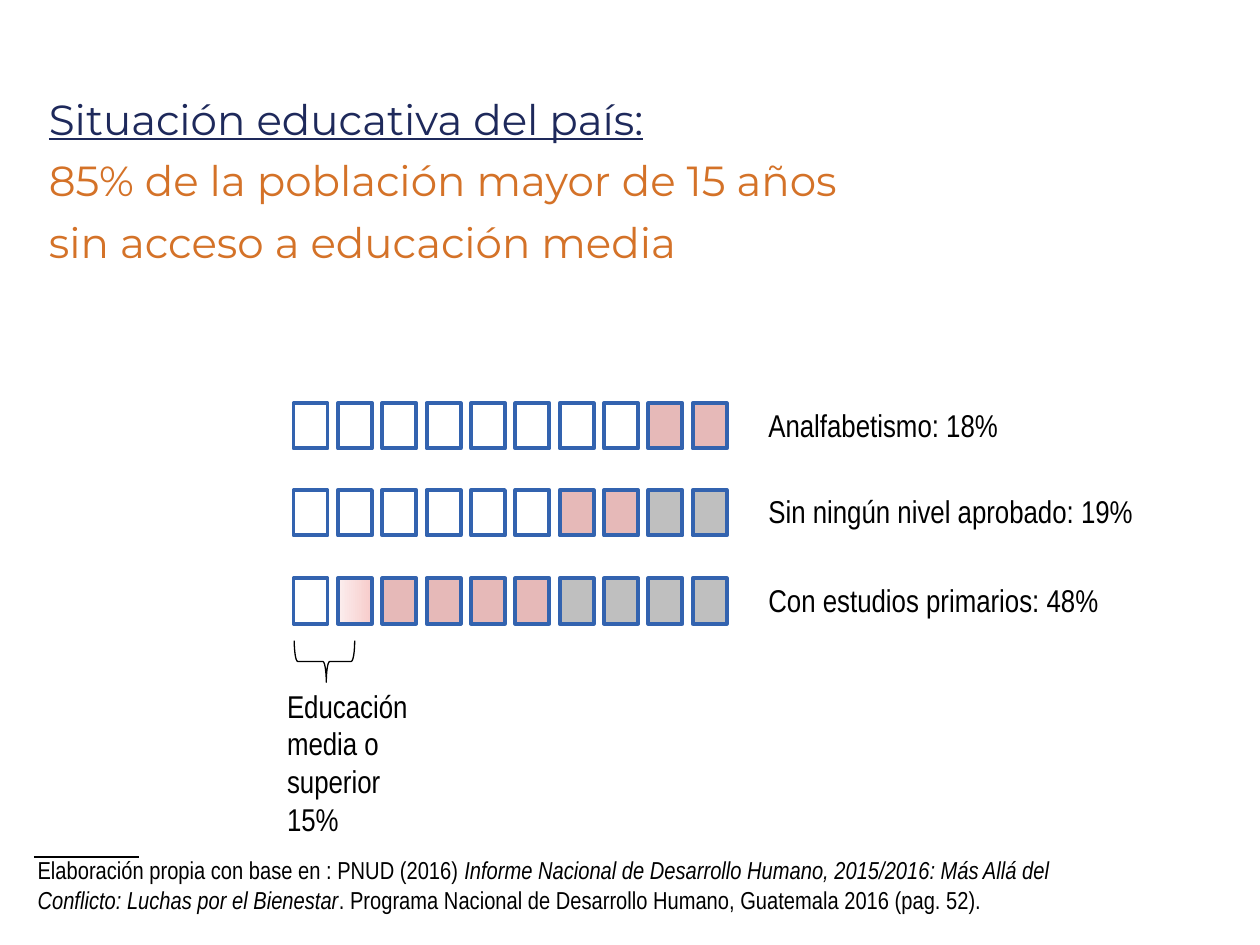
from pptx import Presentation
from pptx.dml.color import RGBColor
from pptx.enum.shapes import MSO_CONNECTOR, MSO_SHAPE
from pptx.enum.text import MSO_AUTO_SIZE
from pptx.oxml.ns import qn
from pptx.util import Inches, Pt
from lxml import etree

BLACK, WHITE, PINK, GRAY = "000000", "FFFFFF", "E6B9B8", "BFBFBF"
BLUE, NAVY, ORANGE = "3363AF", "1E295B", "D47228"
FADED = ("F7CCCB", "FCEEEE")
ROWS = [
    (3.2, [WHITE] * 8 + [PINK] * 2, "Analfabetismo: 18%"),
    (3.89, [WHITE] * 6 + [PINK] * 2 + [GRAY] * 2, "Sin ningún nivel aprobado: 19%"),
    (4.59, [WHITE, FADED] + [PINK] * 4 + [GRAY] * 4, "Con estudios primarios: 48%"),
]


def color(value):
    """Turn a hex string into a colour."""
    return RGBColor.from_string(value)


def add_span(para, text, size=18, font="Arial Narrow", fill=BLACK, italic=False, underline=False):
    """Append formatted text to a paragraph."""
    span = para.add_run()
    span.text = text
    span.font.size = Pt(size)
    span.font.name = font
    span.font.color.rgb = color(fill)
    span.font.italic = italic
    span.font.underline = underline


def add_text(page, left, top, width, height, lines, wrap=True, line_spacing=None, after=None):
    """Add a text box; each line is a list of (text, format) pairs."""
    box = page.shapes.add_textbox(Inches(left), Inches(top), Inches(width), Inches(height))
    frame = box.text_frame
    frame.word_wrap = wrap
    frame.auto_size = MSO_AUTO_SIZE.SHAPE_TO_FIT_TEXT
    for index, spans in enumerate(lines):
        para = frame.add_paragraph() if index else frame.paragraphs[0]
        para.line_spacing = line_spacing
        para.space_after = after
        for text, style in spans:
            add_span(para, text, **style)


def add_cell(page, left, top, fill):
    """Add one outlined cell, solid or with a gradient for a pair of colours."""
    cell = page.shapes.add_shape(
        MSO_SHAPE.RECTANGLE, Inches(left), Inches(top), Inches(0.27), Inches(0.36))
    cell.shadow.inherit = False
    if isinstance(fill, tuple):
        cell.fill.gradient()
        cell.fill.gradient_angle = 180
        for stop, shade in zip(cell.fill.gradient_stops, fill):
            stop.color.rgb = color(shade)
    else:
        cell.fill.solid()
        cell.fill.fore_color.rgb = color(fill)
    cell.line.color.rgb = color(BLUE)
    cell.line.width = Pt(2.25)


def add_row(page, top, fills, label):
    """Add ten cells, each a tenth of the population, and their label."""
    for index, fill in enumerate(fills):
        add_cell(page, 2.33 + index * 0.352, top, fill)
    add_text(page, 6, top - 0.03, 3.13, 0.4, [[(label, {})]], wrap=False)


def add_brace(page):
    """Add the brace under the share with secondary or higher education."""
    brace = page.shapes.add_shape(
        MSO_SHAPE.RIGHT_BRACE, Inches(2.41), Inches(5.01), Inches(0.33), Inches(0.48))
    brace.rotation = 90
    brace.adjustments[0] = 0.083
    brace.adjustments[1] = 0.47
    brace.shadow.inherit = False
    brace.fill.background()
    brace.line.color.rgb = color(BLACK)
    brace.line.width = Pt(0.75)


def add_rule(page, left, right, top):
    """Add the thin line above the source note."""
    rule = page.shapes.add_connector(
        MSO_CONNECTOR.STRAIGHT, Inches(left), Inches(top), Inches(right), Inches(top))
    rule.line.color.rgb = color(BLACK)
    rule.line.width = Pt(1)
    etree.SubElement(rule._element.spPr, qn("a:effectLst"))


def main():
    """Build the slide and save it."""
    deck = Presentation()
    deck.slide_width, deck.slide_height = Inches(10), Inches(7.5)
    page = deck.slides.add_slide(deck.slide_layouts[6])
    heading = {"size": 24, "font": "Montserrat"}
    add_text(page, 0.29, 0.63, 7.2, 1.52, [
        [("Situación educativa del país:", {**heading, "fill": NAVY, "underline": True})],
        [("85% de la población mayor de 15 años", {**heading, "fill": ORANGE})],
        [("sin acceso a educación media", {**heading, "fill": ORANGE})],
    ], line_spacing=1.15, after=Pt(2))
    for top, fills, label in ROWS:
        add_row(page, top, fills, label)
    add_brace(page)
    add_text(page, 2.18, 5.4, 1.33, 1.31, [
        [("Educación", {})], [("media o superior", {})], [("15%", {})]])
    note = {"size": 14}
    add_text(page, 0.2, 6.74, 8.31, 0.57, [[
        ("Elaboración propia con base en : PNUD (2016) ", note),
        ("Informe Nacional de Desarrollo Humano, 2015/2016: Más Allá del Conflicto: "
         "Luchas por el Bienestar", {**note, "italic": True}),
        (". Programa Nacional de Desarrollo Humano, Guatemala 2016 (pag. 52).", note),
    ]])
    add_rule(page, 0.27, 1.1, 6.8)
    deck.save("out.pptx")


if __name__ == "__main__":
    main()
